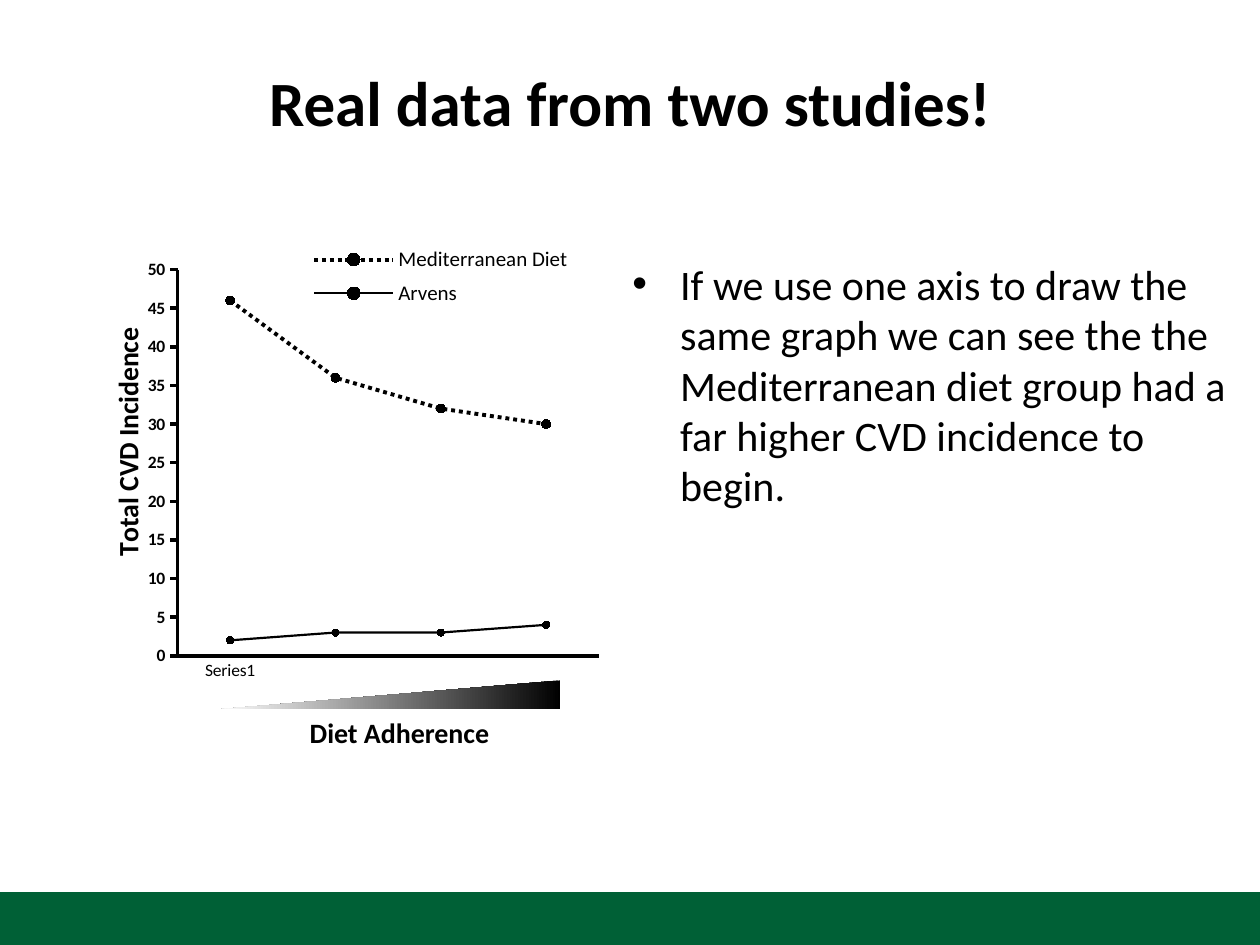
from dataclasses import dataclass
from typing import Optional

from lxml.etree import Element, SubElement
from pptx import Presentation
from pptx.chart.data import CategoryChartData
from pptx.dml.color import RGBColor
from pptx.enum.chart import XL_CHART_TYPE, XL_LEGEND_POSITION, XL_MARKER_STYLE, XL_TICK_MARK
from pptx.enum.dml import MSO_LINE
from pptx.enum.shapes import MSO_SHAPE
from pptx.enum.text import MSO_ANCHOR, PP_ALIGN
from pptx.oxml.ns import qn
from pptx.util import Inches, Pt


@dataclass(frozen=True)
class Theme:
    face: str = "Calibri"
    ink: RGBColor = RGBColor(0, 0, 0)
    paper: RGBColor = RGBColor(255, 255, 255)
    green: RGBColor = RGBColor(0x00, 0x60, 0x36)
    title: float = 36
    body: float = 24
    label: float = 16
    legend: float = 12
    tick: float = 10


@dataclass(frozen=True)
class Diet:
    name: str
    rates: tuple
    width: float
    dot: int
    dash: Optional[MSO_LINE] = None


THEME = Theme()
DIETS = (
    Diet("Mediterranean Diet", (46, 36, 32, 30), 2.25, 5, MSO_LINE.ROUND_DOT),
    Diet("Arvens", (2, 3, 3, 4), 1.25, 4),
)


def box(*sides: float) -> list:
    return [Inches(side) for side in sides]


def style(font, size: float, bold: bool = False) -> None:
    looks = {"name": THEME.face, "size": Pt(size), "bold": bold}
    for key, value in looks.items():
        setattr(font, key, value)
    font.color.rgb = THEME.ink


def write(frame, text: str, size: float, bold: bool = False):
    para = frame.paragraphs[0]
    run = para.add_run()
    run.text = text
    style(run.font, size, bold)
    return para


def place(part, index: int, spot: dict, inner: bool = False) -> None:
    """Pin a chart part at fractions of the chart, as its child number index."""
    for old in part.findall(qn("c:layout")):
        part.remove(old)
    layout = Element(qn("c:layout"))
    manual = SubElement(layout, qn("c:manualLayout"))
    if inner:
        SubElement(manual, qn("c:layoutTarget"), val="inner")
    for key in "xy":
        SubElement(manual, qn(f"c:{key}Mode"), val="edge")
    for key, value in spot.items():
        SubElement(manual, qn(f"c:{key}"), val=str(value))
    part.insert(index, layout)


def draw_line(series, diet: Diet) -> None:
    series.smooth = False
    line, mark = series.format.line, series.marker
    line.width = Pt(diet.width)
    line.color.rgb = THEME.ink
    if diet.dash:
        line.dash_style = diet.dash
    mark.style, mark.size = XL_MARKER_STYLE.CIRCLE, diet.dot
    mark.format.fill.solid()
    mark.format.fill.fore_color.rgb = THEME.ink
    mark.format.line.color.rgb = THEME.ink


def draw_axis(axis, tick: XL_TICK_MARK, bold: bool) -> None:
    looks = {"has_major_gridlines": False, "major_tick_mark": tick,
             "minor_tick_mark": XL_TICK_MARK.NONE}
    for key, value in looks.items():
        setattr(axis, key, value)
    axis.format.line.width = Pt(2)
    axis.format.line.color.rgb = THEME.ink
    style(axis.tick_labels.font, THEME.tick, bold)


def draw_chart(slide) -> None:
    data = CategoryChartData()
    data.categories = ["Series1", "", "", ""]
    for diet in DIETS:
        data.add_series(diet.name, diet.rates)
    chart = slide.shapes.add_chart(
        XL_CHART_TYPE.LINE_MARKERS, *box(0.74, 1.82, 4.18, 3.58), data).chart
    chart.has_title = False
    style(chart.font, THEME.tick)
    plot = chart.plots[0]
    plot.vary_by_categories = False
    for series, diet in zip(plot.series, DIETS):
        draw_line(series, diet)

    draw_axis(chart.category_axis, XL_TICK_MARK.NONE, False)
    rate = chart.value_axis
    draw_axis(rate, XL_TICK_MARK.OUTSIDE, True)
    scale = {"minimum_scale": 0, "maximum_scale": 50, "major_unit": 5}
    for key, value in scale.items():
        setattr(rate, key, value)
    frame = rate.axis_title.text_frame
    write(frame, "Total CVD Incidence", THEME.label, True)
    turn = frame._txBody.find(qn("a:bodyPr"))
    turn.set("rot", "-5400000")
    turn.set("vert", "horz")

    chart.has_legend = True
    legend = chart.legend
    legend.position = XL_LEGEND_POSITION.RIGHT
    legend.include_in_layout = False
    style(legend.font, THEME.legend)

    area = chart._chartSpace.chart.plotArea
    place(area, 0, {"x": 0.16, "y": 0.09, "w": 0.8, "h": 0.86}, inner=True)
    place(rate.axis_title._element, 1, {"x": 0.02, "y": 0.21})
    place(legend._element, 1, {"x": 0.4, "y": 0.02, "w": 0.52, "h": 0.17})


def draw_wedge(slide) -> None:
    """Show adherence rising to the right, with its caption below."""
    group = slide.shapes.add_group_shape()
    wedge = group.shapes.add_shape(MSO_SHAPE.RIGHT_TRIANGLE, *box(1.73, 5.4, 2.72, 0.23))
    wedge.shadow.inherit = False
    wedge._element.spPr.find(qn("a:xfrm")).set("flipH", "1")
    wedge.line.fill.background()
    wedge.fill.gradient()
    wedge.fill.gradient_angle = 0
    for stop, color in zip(wedge.fill.gradient_stops, (THEME.ink, THEME.paper)):
        stop.color.rgb = color
    note = group.shapes.add_textbox(*box(2.36, 5.63, 1.81, 0.37))
    write(note.text_frame, "Diet Adherence", THEME.label, True)


def draw_point(slide) -> None:
    frame = slide.shapes.add_textbox(*box(4.92, 2, 4.95, 1.85)).text_frame
    frame.word_wrap = True
    para = write(frame, "If we use one axis to draw the same graph we can see the the "
                 "Mediterranean diet group had a far higher CVD incidence to begin.",
                 THEME.body)
    para.space_before = Pt(11.8)
    props = para._p.get_or_add_pPr()
    props.set("marL", str(Inches(0.38)))
    props.set("indent", str(-Inches(0.38)))
    SubElement(props, qn("a:buFont"), typeface="Arial")
    SubElement(props, qn("a:buChar"), char="•")


def main() -> None:
    deck = Presentation()
    deck.slide_width, deck.slide_height = box(10, 7.5)
    slide = deck.slides.add_slide(deck.slide_layouts[5])

    band = slide.shapes.add_shape(MSO_SHAPE.RECTANGLE, *box(0, 7.08, 10, 0.42))
    band.shadow.inherit = False
    band.fill.solid()
    band.fill.fore_color.rgb = THEME.green
    band.line.fill.background()

    title = slide.shapes.title
    for key, value in zip(("left", "top", "width", "height"), box(0.5, 0.18, 9, 1.25)):
        setattr(title, key, value)
    title.text_frame.vertical_anchor = MSO_ANCHOR.MIDDLE
    para = write(title.text_frame, "Real data from two studies!", THEME.title, True)
    para.alignment = PP_ALIGN.CENTER

    draw_point(slide)
    draw_chart(slide)
    draw_wedge(slide)
    deck.save("out.pptx")


if __name__ == "__main__":
    main()
